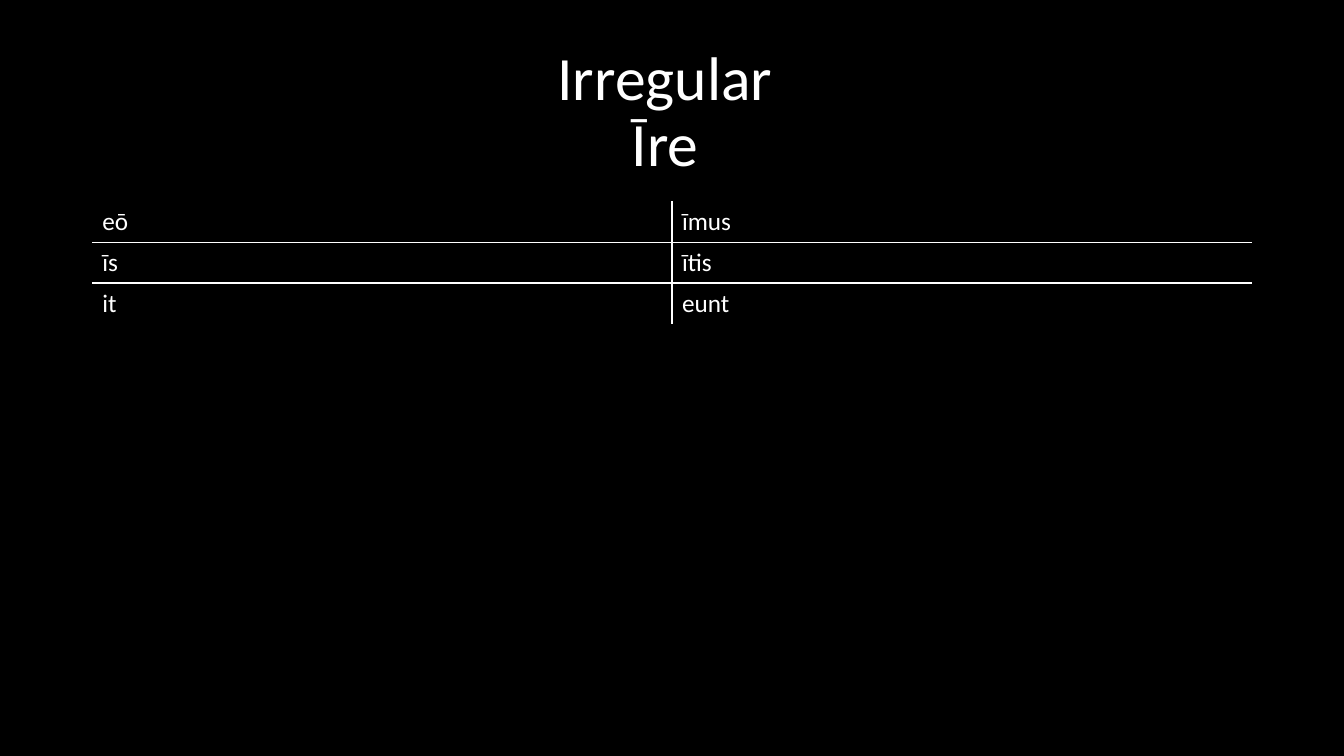
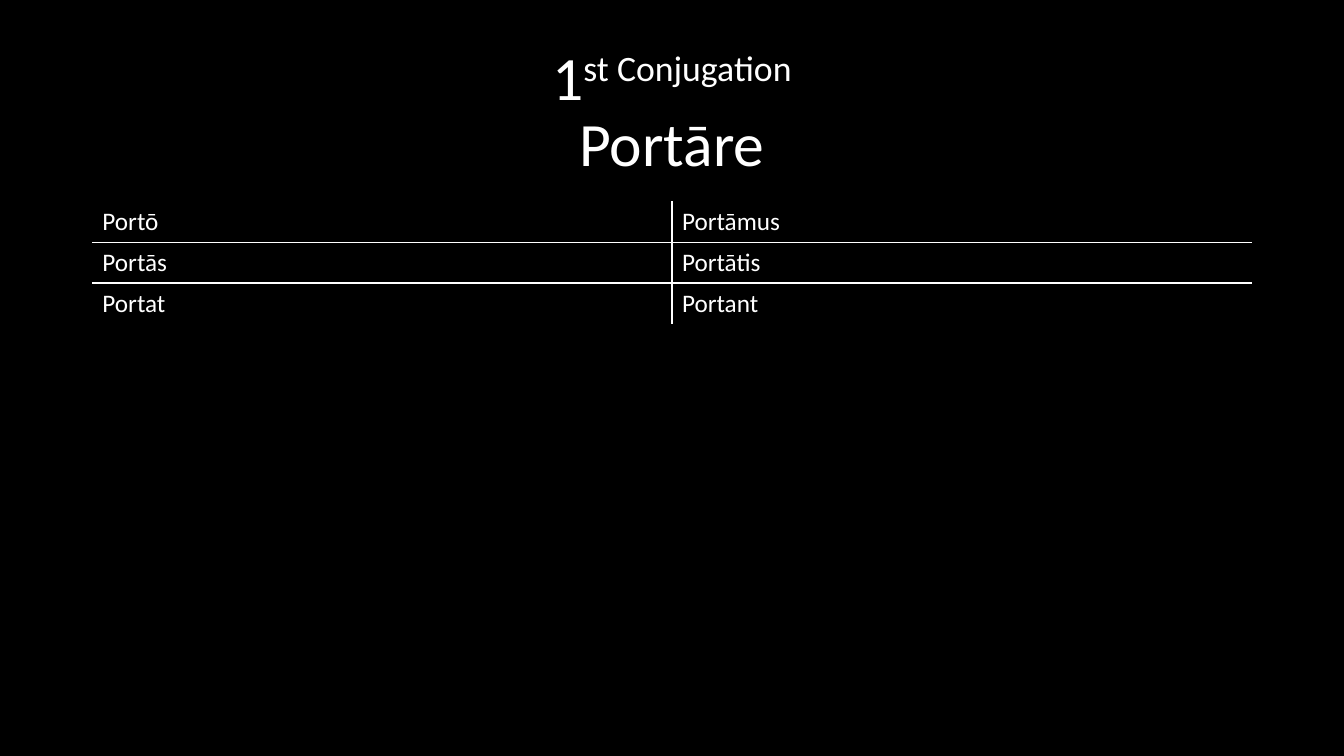
from dataclasses import dataclass

from lxml import etree
from pptx import Presentation
from pptx.dml.color import RGBColor
from pptx.enum import text as txt
from pptx.oxml import ns
from pptx.util import Pt

BLACK = RGBColor(0x00, 0x00, 0x00)
WHITE = RGBColor(0xFF, 0xFF, 0xFF)
FONT = "Calibri"
SLIDE_WIDTH, SLIDE_HEIGHT = Pt(960), Pt(540)
MARGIN = Pt(66)
CONTENT_WIDTH = SLIDE_WIDTH - 2 * MARGIN
TITLE_TOP, TITLE_HEIGHT = Pt(28.75), Pt(104.4)
TABLE_TOP, ROW_HEIGHT = Pt(143.75), Pt(29.2)
TITLE_SIZE, CELL_SIZE = Pt(44), Pt(18)
RULE_WIDTH = Pt(1)


@dataclass(frozen=True)
class TitleRun:
    text: str
    superscript: bool = False


@dataclass(frozen=True)
class Conjugation:
    title_lines: tuple[tuple[TitleRun, ...], ...]
    forms: tuple[tuple[str, str], ...]  # singular, plural for each person


CONJUGATIONS = (
    Conjugation(
        ((TitleRun("Irregular "),), (TitleRun("Īre "),)),
        (("eō", "īmus"), ("īs", "ītis"), ("it", "eunt")),
    ),
    Conjugation(
        ((TitleRun("1"), TitleRun("st Conjugation", superscript=True)),
         (TitleRun("Portāre"),)),
        (("Portō", "Portāmus"), ("Portās", "Portātis"), ("Portat", "Portant")),
    ),
)


def add_run(paragraph, wording: str, size: int):
    run = paragraph.add_run()
    run.text = wording
    run.font.name = FONT
    run.font.size = size
    run.font.color.rgb = WHITE
    return run


def add_title(slide, lines: tuple[tuple[TitleRun, ...], ...]) -> None:
    title = slide.shapes.title
    title.left, title.top = MARGIN, TITLE_TOP
    title.width, title.height = CONTENT_WIDTH, TITLE_HEIGHT
    frame = title.text_frame
    frame.vertical_anchor = txt.MSO_ANCHOR.MIDDLE
    frame.auto_size = txt.MSO_AUTO_SIZE.NONE
    frame.word_wrap = True
    heading = frame.paragraphs[0]
    heading.alignment = txt.PP_ALIGN.CENTER
    heading.line_spacing = 0.9
    for index, line in enumerate(lines):
        if index:
            heading.add_line_break()
        for part in line:
            run = add_run(heading, part.text, TITLE_SIZE)
            if part.superscript:
                run._r.get_or_add_rPr().set("baseline", "30000")


def set_borders(cell, inner_edges: dict[str, bool]) -> None:
    """Rule the edges that face another cell and clear the outer ones."""
    properties = cell._tc.get_or_add_tcPr()
    for edge, is_inner in inner_edges.items():
        border = etree.SubElement(properties, ns.qn(f"a:ln{edge}"), w=str(RULE_WIDTH))
        if is_inner:
            fill = etree.SubElement(border, ns.qn("a:solidFill"))
            etree.SubElement(fill, ns.qn("a:srgbClr"), val=str(WHITE))
        else:
            etree.SubElement(border, ns.qn("a:noFill"))


def add_forms_table(slide, forms: tuple[tuple[str, str], ...]) -> None:
    row_count, column_count = len(forms), len(forms[0])
    table = slide.shapes.add_table(
        row_count, column_count, MARGIN, TABLE_TOP,
        CONTENT_WIDTH, ROW_HEIGHT * row_count,
    ).table
    table.first_row = table.horz_banding = False
    for row, person in enumerate(forms):
        for column, form in enumerate(person):
            cell = table.cell(row, column)
            set_borders(cell, {
                "L": column > 0,
                "R": column < column_count - 1,
                "T": row > 0,
                "B": row < row_count - 1,
            })
            cell.fill.background()
            add_run(cell.text_frame.paragraphs[0], form, CELL_SIZE)


def main() -> None:
    deck = Presentation()
    deck.slide_width, deck.slide_height = SLIDE_WIDTH, SLIDE_HEIGHT
    backdrop = deck.slide_master.background.fill
    backdrop.solid()
    backdrop.fore_color.rgb = BLACK
    title_only = deck.slide_layouts.get_by_name("Title Only")
    for conjugation in CONJUGATIONS:
        slide = deck.slides.add_slide(title_only)
        add_title(slide, conjugation.title_lines)
        add_forms_table(slide, conjugation.forms)
    deck.save("out.pptx")


if __name__ == "__main__":
    main()
